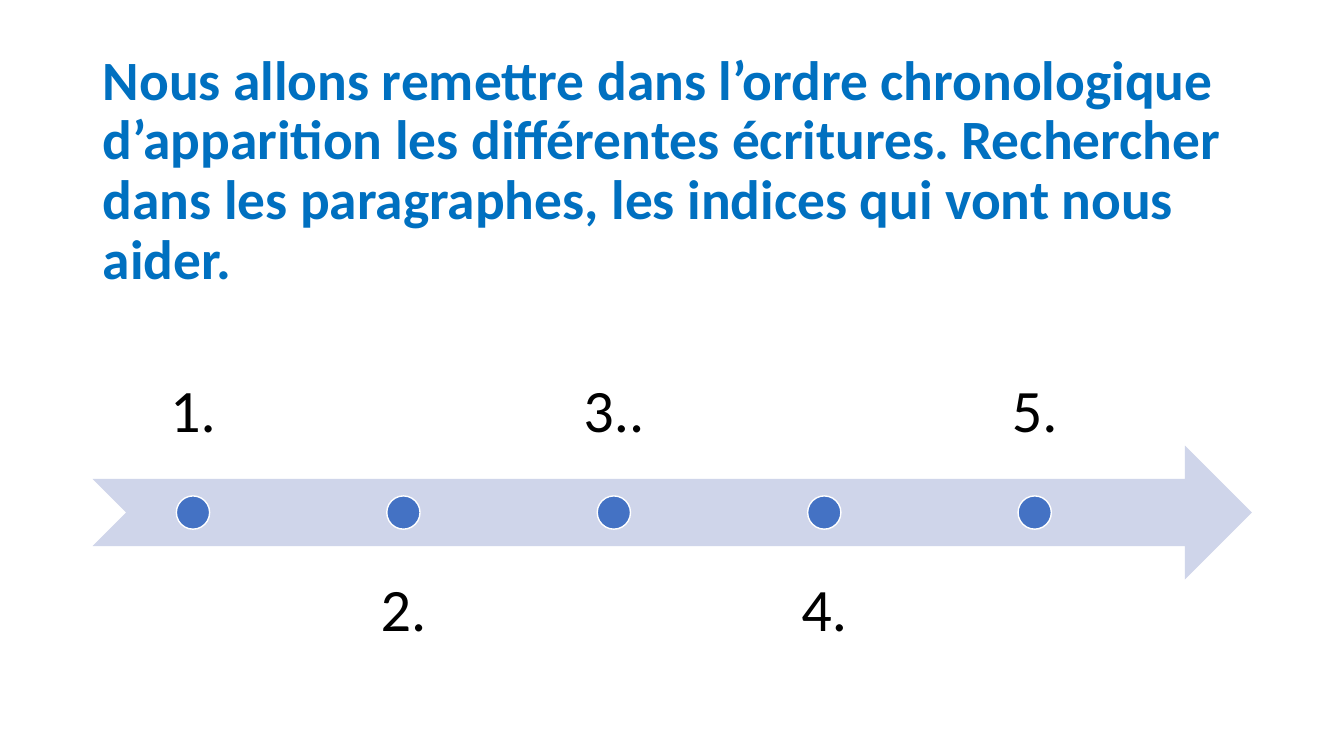
"""Build a slide with a five-step chronological timeline."""
from dataclasses import dataclass
from typing import Any

import pptx
import pptx.dml.color
import pptx.enum.shapes
import pptx.enum.text
import pptx.util

Inches = pptx.util.Inches
Pt = pptx.util.Pt
RGBColor = pptx.dml.color.RGBColor
Align = pptx.enum.text.PP_ALIGN
Anchor = pptx.enum.text.MSO_ANCHOR
Preset = pptx.enum.shapes.MSO_SHAPE

COLORS = {
    "instruction": "0070C0",
    "arrow": "CFD5EA",
    "dot": "4472C4",
    "outline": "FFFFFF",
    "label": "000000",
}
INSTRUCTION = (
    "Nous allons remettre dans l’ordre chronologique d’apparition les différentes "
    "écritures. Rechercher dans les paragraphes, les indices qui vont nous aider."
)
STEP_LABELS = ("1.", "2.", "3..", "4.", "5.")
MARGIN, TIMELINE_WIDTH, BAND_HEIGHT = 0.92, 11.5, 1.33
ARROW_TOP = 4.42
LABEL_WIDTH, LABEL_INSET, DOT_SIZE = 1.99, 0.33, 0.33
FIRST_CENTER, STEP_PITCH = 1.915, 2.0875


@dataclass(frozen=True)
class Box:
    left: float
    top: float
    width: float
    height: float

    def lengths(self) -> tuple:
        return tuple(Inches(v) for v in (self.left, self.top, self.width, self.height))


@dataclass(frozen=True)
class Step:
    label: str
    center: float
    above: bool


def color(name: str) -> RGBColor:
    return RGBColor.from_string(COLORS[name])


def apply_format(target: Any, values: dict) -> None:
    for attribute, value in values.items():
        setattr(target, attribute, value)


def write_text(shape: Any, text: str, frame: dict, paragraph: dict, font: dict, tint: str) -> None:
    text_frame = shape.text_frame
    text_frame.text = text
    line = text_frame.paragraphs[0]
    run_font = line.runs[0].font
    common_frame = {"word_wrap": True, "auto_size": pptx.enum.text.MSO_AUTO_SIZE.NONE}
    apply_format(text_frame, common_frame | frame)
    apply_format(line, {"line_spacing": 0.9} | paragraph)
    apply_format(run_font, {"name": "Calibri"} | font)
    run_font.color.rgb = color(tint)


def draw_preset(slide: Any, preset: Any, box: Box, fill: str, outline: str = "") -> None:
    shape = slide.shapes.add_shape(preset, *box.lengths())
    shape.shadow.inherit = False
    shape.fill.solid()
    shape.fill.fore_color.rgb = color(fill)
    if outline:
        shape.line.color.rgb = color(outline)
        shape.line.width = Pt(1)
    else:
        shape.line.fill.background()


def draw_step(slide: Any, step: Step) -> None:
    label_top = ARROW_TOP + (-1 if step.above else 1)
    label_box = Box(step.center - LABEL_WIDTH / 2, label_top, LABEL_WIDTH, BAND_HEIGHT)
    label = slide.shapes.add_textbox(*label_box.lengths())
    sides = ("left", "right", "top", "bottom")
    frame = {f"margin_{side}": Inches(LABEL_INSET) for side in sides}
    frame["vertical_anchor"] = Anchor.BOTTOM if step.above else Anchor.TOP
    write_text(label, step.label, frame, {"alignment": Align.CENTER}, {"size": Pt(43)}, "label")
    dot_top = ARROW_TOP + (BAND_HEIGHT - DOT_SIZE) / 2
    dot_box = Box(step.center - DOT_SIZE / 2, dot_top, DOT_SIZE, DOT_SIZE)
    draw_preset(slide, Preset.OVAL, dot_box, "dot", "outline")


def main() -> None:
    deck = pptx.Presentation()
    apply_format(deck, {"slide_width": Inches(13.333), "slide_height": Inches(7.5)})
    slide = deck.slides.add_slide(deck.slide_layouts[5])

    title = slide.shapes.title
    title_box = Box(MARGIN, 0.98, TIMELINE_WIDTH, 1.45)
    apply_format(title, dict(zip(("left", "top", "width", "height"), title_box.lengths())))
    write_text(
        title,
        INSTRUCTION,
        {"vertical_anchor": Anchor.MIDDLE},
        {"alignment": Align.LEFT},
        {"size": Pt(39.6), "bold": True},
        "instruction",
    )

    arrow_box = Box(MARGIN, ARROW_TOP, TIMELINE_WIDTH, BAND_HEIGHT)
    draw_preset(slide, Preset.NOTCHED_RIGHT_ARROW, arrow_box, "arrow")
    for index, label in enumerate(STEP_LABELS):
        draw_step(slide, Step(label, FIRST_CENTER + index * STEP_PITCH, index % 2 == 0))

    deck.save("out.pptx")


if __name__ == "__main__":
    main()
